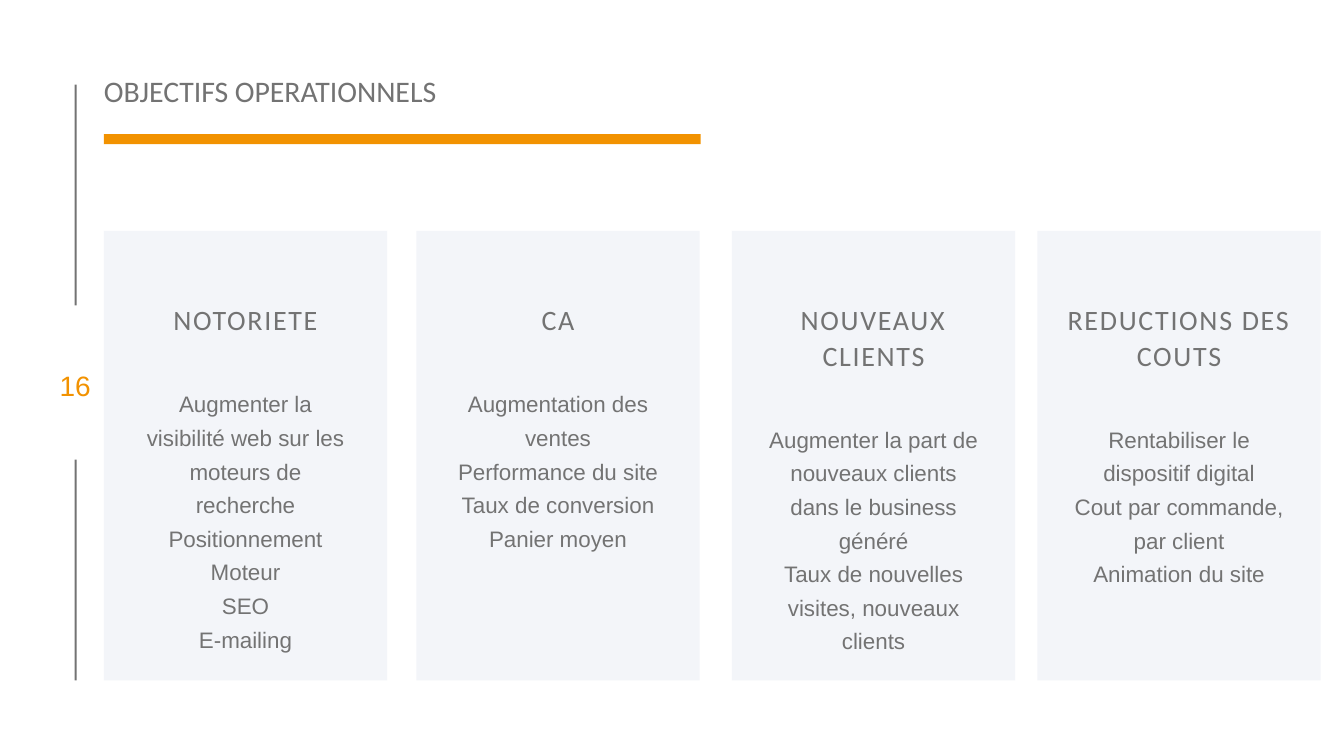
import pptx
import pptx.util
import pptx.dml.color
import pptx.enum.shapes
import pptx.enum.text

GREY = pptx.dml.color.RGBColor(0x73, 0x73, 0x73)
ORANGE = pptx.dml.color.RGBColor(0xF2, 0x92, 0x00)
PALE = pptx.dml.color.RGBColor(0xF3, 0xF5, 0xF9)
LEFT = pptx.enum.text.PP_ALIGN.LEFT
CENTER = pptx.enum.text.PP_ALIGN.CENTER

MARGIN = 7.73
CARD_TOP, CARD_WIDTH, CARD_HEIGHT = 30.53, 21.08, 59.47
HEADING_TOP, HEADING_LINE, HEADING_GAP = 39.8, 4.67, 6.3
HEADING_WIDTH, DETAIL_WIDTH = 18.45, 15.83

OBJECTIVES = [
    (MARGIN, "NOTORIETE", 1,
     ["Augmenter la visibilité web sur les moteurs de recherche",
      "Positionnement Moteur", "SEO", "E-mailing"]),
    (30.98, "CA", 1,
     ["Augmentation des ventes", "Performance du site",
      "Taux de conversion", "Panier moyen"]),
    (54.46, "NOUVEAUX CLIENTS", 2,
     ["Augmenter la part de nouveaux clients dans le business généré",
      "Taux de nouvelles visites, nouveaux clients"]),
    (77.19, "REDUCTIONS DES COUTS", 2,
     ["Rentabiliser le dispositif digital", "Cout par commande,",
      "par client", "Animation du site"]),
]


class Deck:
    """Draws styled elements on a slide divided into 100 columns and 100 rows."""

    def __init__(self):
        self.show = pptx.Presentation()
        self.show.slide_width = pptx.util.Inches(13.33)
        self.show.slide_height = pptx.util.Inches(7.5)
        self.slide = self.show.slides.add_slide(self.show.slide_layouts[5])

    def area(self, column, row, columns, rows):
        width, height = self.show.slide_width, self.show.slide_height
        return [int(share * side / 100) for share, side in
                ((column, width), (row, height), (columns, width), (rows, height))]

    def block(self, column, row, columns, rows, color):
        block = self.slide.shapes.add_shape(
            pptx.enum.shapes.MSO_SHAPE.RECTANGLE, *self.area(column, row, columns, rows))
        block.shadow.inherit = False
        block.fill.solid()
        block.fill.fore_color.rgb = color
        block.line.fill.background()

    def fill_text(self, frame, lines, size, leading, font="Arial", color=GREY,
                  align=CENTER, tracking=None):
        frame.margin_left = frame.margin_right = 0
        frame.margin_top = frame.margin_bottom = 0
        frame.word_wrap = True
        frame.vertical_anchor = pptx.enum.text.MSO_ANCHOR.TOP
        frame.auto_size = pptx.enum.text.MSO_AUTO_SIZE.SHAPE_TO_FIT_TEXT
        frame.text = "\n".join(lines)
        for paragraph in frame.paragraphs:
            paragraph.alignment = align
            paragraph.line_spacing = pptx.util.Pt(leading)
            for run in paragraph.runs:
                run.font.name = font
                run.font.size = pptx.util.Pt(size)
                run.font.color.rgb = color
                if tracking:
                    run._r.get_or_add_rPr().set("spc", str(tracking))

    def text(self, column, row, columns, rows, lines, size, leading, **style):
        box = self.slide.shapes.add_textbox(*self.area(column, row, columns, rows))
        self.fill_text(box.text_frame, lines, size, leading, **style)

    def title(self, column, row, columns, rows, wording):
        title = self.slide.shapes.title
        title.left, title.top, title.width, title.height = self.area(
            column, row, columns, rows)
        self.fill_text(title.text_frame, [wording], 21.3, 22.2,
                       font="Calibri", align=LEFT)

    def card(self, column, heading, heading_lines, details):
        self.block(column, CARD_TOP, CARD_WIDTH, CARD_HEIGHT, PALE)
        heading_rows = heading_lines * HEADING_LINE
        self.text(column + (CARD_WIDTH - HEADING_WIDTH) / 2, HEADING_TOP,
                  HEADING_WIDTH, heading_rows, [heading], 20, 25.4,
                  font="Calibri", tracking=120)
        self.text(column + (CARD_WIDTH - DETAIL_WIDTH) / 2,
                  HEADING_TOP + heading_rows + HEADING_GAP,
                  DETAIL_WIDTH, 26.93, details, 16, 24)


def main():
    deck = Deck()
    for rail_top in (11.2, 60.8):
        deck.block(5.55, rail_top, 0.15, 29.2, GREY)
    deck.text(3.53, 48, 4.13, 5.2, ["16"], 20, 28, color=ORANGE)
    deck.title(MARGIN, 10.27, 44.41, 4.13, "OBJECTIFS OPERATIONNELS")
    deck.block(MARGIN, 17.73, 44.41, 1.33, ORANGE)
    for objective in OBJECTIVES:
        deck.card(*objective)
    deck.show.save("out.pptx")


if __name__ == "__main__":
    main()
